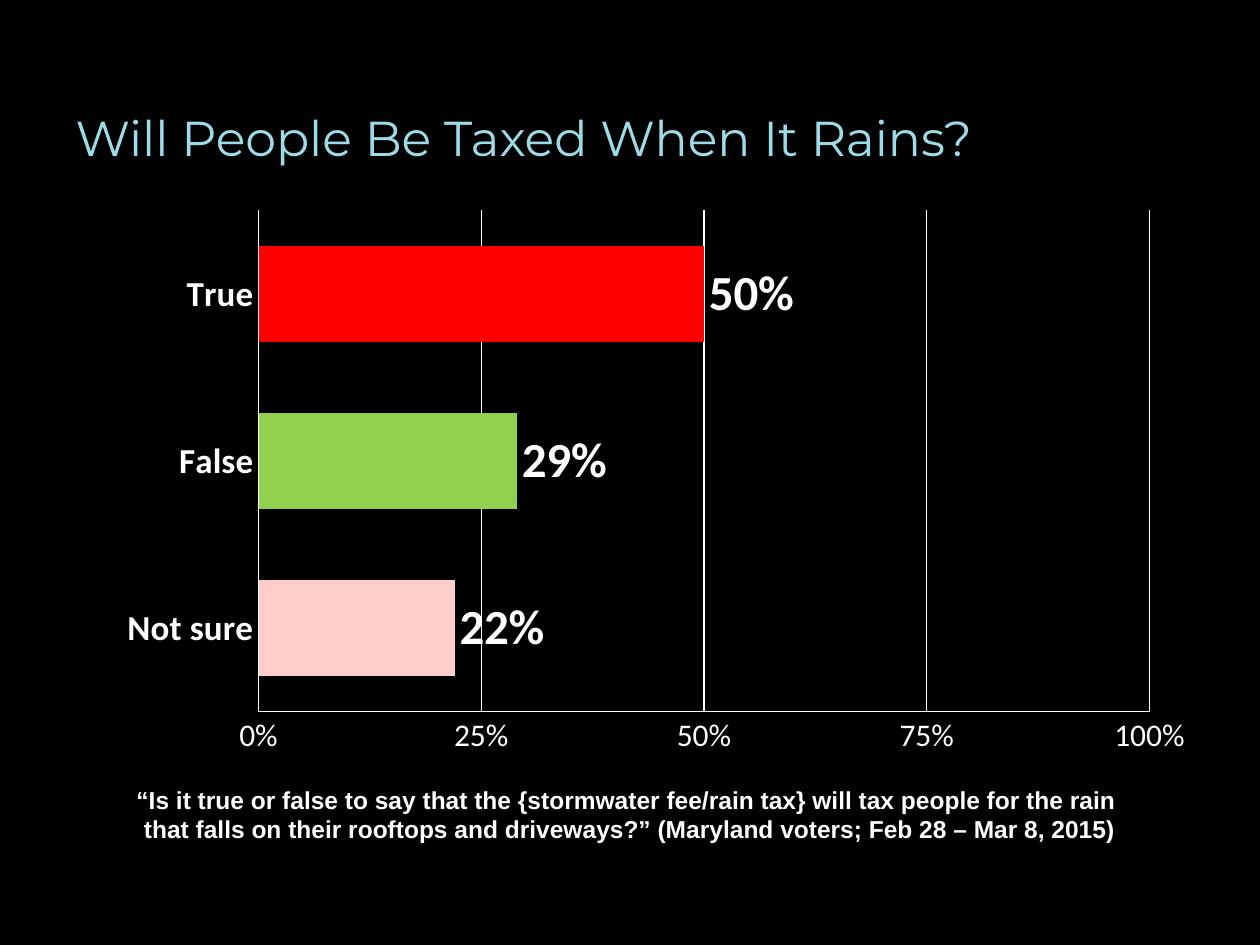
from pptx import Presentation
from pptx.chart.data import CategoryChartData
from pptx.dml.color import RGBColor
from pptx.enum.chart import XL_CHART_TYPE, XL_LABEL_POSITION, XL_TICK_MARK
from pptx.enum.text import MSO_ANCHOR, MSO_AUTO_SIZE, PP_ALIGN
from pptx.oxml import parse_xml
from pptx.oxml.ns import nsdecls
from pptx.util import Inches, Pt

WHITE = "FFFFFF"
BARS = [("Not sure", 0.22, "FFCCCC"), ("False", 0.29, "92D050"), ("True", 0.5, "FF0000")]
QUOTE = [
    "“Is it true or false to say that the {stormwater fee/rain tax} will tax people for the rain ",
    "that falls on their rooftops and driveways?” (Maryland voters; Feb 28 – Mar 8, 2015)",
]


def paint(fill, color):
    fill.solid()
    fill.fore_color.rgb = RGBColor.from_string(color)


def style(font, name, size, color, bold=False):
    font.name = name
    font.size = Pt(size)
    font.bold = bold
    font.color.rgb = RGBColor.from_string(color)


def add_run(para, text, *look):
    run = para.add_run()
    run.text = text
    style(run.font, *look)


def add_title(slide):
    title = slide.shapes.title
    title.left, title.top = Inches(0.5), Inches(0.46)
    title.width, title.height = Inches(9), Inches(1.25)
    frame = title.text_frame
    frame.vertical_anchor = MSO_ANCHOR.MIDDLE
    para = frame.paragraphs[0]
    para.alignment = PP_ALIGN.LEFT
    add_run(para, "Will People Be Taxed When It Rains?", "Montserrat", 28, "9DDBE7")


def add_quote(slide):
    box = slide.shapes.add_textbox(Inches(0.44), Inches(6.18), Inches(9.12), Inches(0.57))
    frame = box.text_frame
    frame.word_wrap = True
    frame.auto_size = MSO_AUTO_SIZE.SHAPE_TO_FIT_TEXT
    for i, line in enumerate(QUOTE):
        para = frame.add_paragraph() if i else frame.paragraphs[0]
        para.alignment = PP_ALIGN.CENTER
        props = para._p.get_or_add_pPr()
        props.set("marL", str(Inches(0.75)))
        props.set("indent", str(Inches(-0.75)))
        add_run(para, line, "Arial", 14, WHITE, True)


def style_axis(axis, size, bold):
    axis.major_tick_mark = axis.minor_tick_mark = XL_TICK_MARK.NONE
    style(axis.tick_labels.font, "Calibri", size, WHITE, bold)
    thin_line(axis.format.line)


def thin_line(line):
    paint(line.fill, WHITE)
    line.width = Pt(0.75)


def place_plot(chart, x, y, w, h):
    area = chart._chartSpace.chart.plotArea
    for old in area.findall("{*}layout"):
        area.remove(old)
    sizes = "".join(f'<c:{k} val="{v}"/>' for k, v in zip("xywh", (x, y, w, h)))
    area.insert(0, parse_xml(
        f'<c:layout {nsdecls("c")}><c:manualLayout><c:layoutTarget val="inner"/>'
        f'<c:xMode val="edge"/><c:yMode val="edge"/>{sizes}</c:manualLayout></c:layout>'))


def add_bars(slide):
    names, values, colors = zip(*BARS)
    data = CategoryChartData(number_format="0%")
    data.categories = names
    data.add_series("Series 1", values)
    chart = slide.shapes.add_chart(
        XL_CHART_TYPE.BAR_CLUSTERED, Inches(0.83), Inches(1.58),
        Inches(8.73), Inches(4.52), data).chart
    chart.has_legend = chart.has_title = False
    style(chart.font, "Calibri", 18, WHITE)
    place_plot(chart, 0.14, 0.02, 0.81, 0.88)

    style_axis(chart.category_axis, 20, True)
    scale = chart.value_axis
    style_axis(scale, 18, False)
    scale.minimum_scale, scale.maximum_scale, scale.major_unit = 0, 1, 0.25
    scale.has_major_gridlines = True
    thin_line(scale.major_gridlines.format.line)
    scale.tick_labels.number_format = "0%"
    scale.tick_labels.number_format_is_linked = False

    plot = chart.plots[0]
    plot.gap_width = 75
    plot.vary_by_categories = False
    series = plot.series[0]
    paint(series.format.fill, "0066FF")
    for i, color in enumerate(colors):
        paint(series.points[i].format.fill, color)
    labels = series.data_labels
    labels.show_value = True
    labels.position = XL_LABEL_POSITION.OUTSIDE_END
    labels.number_format = "0%"
    labels.number_format_is_linked = False
    style(labels.font, "Calibri", 28, WHITE, True)


def main():
    deck = Presentation()
    deck.slide_width, deck.slide_height = Inches(10), Inches(7.5)
    slide = deck.slides.add_slide(deck.slide_layouts[5])
    paint(slide.background.fill, "000000")
    add_bars(slide)
    add_quote(slide)
    add_title(slide)
    deck.save("out.pptx")


if __name__ == "__main__":
    main()
